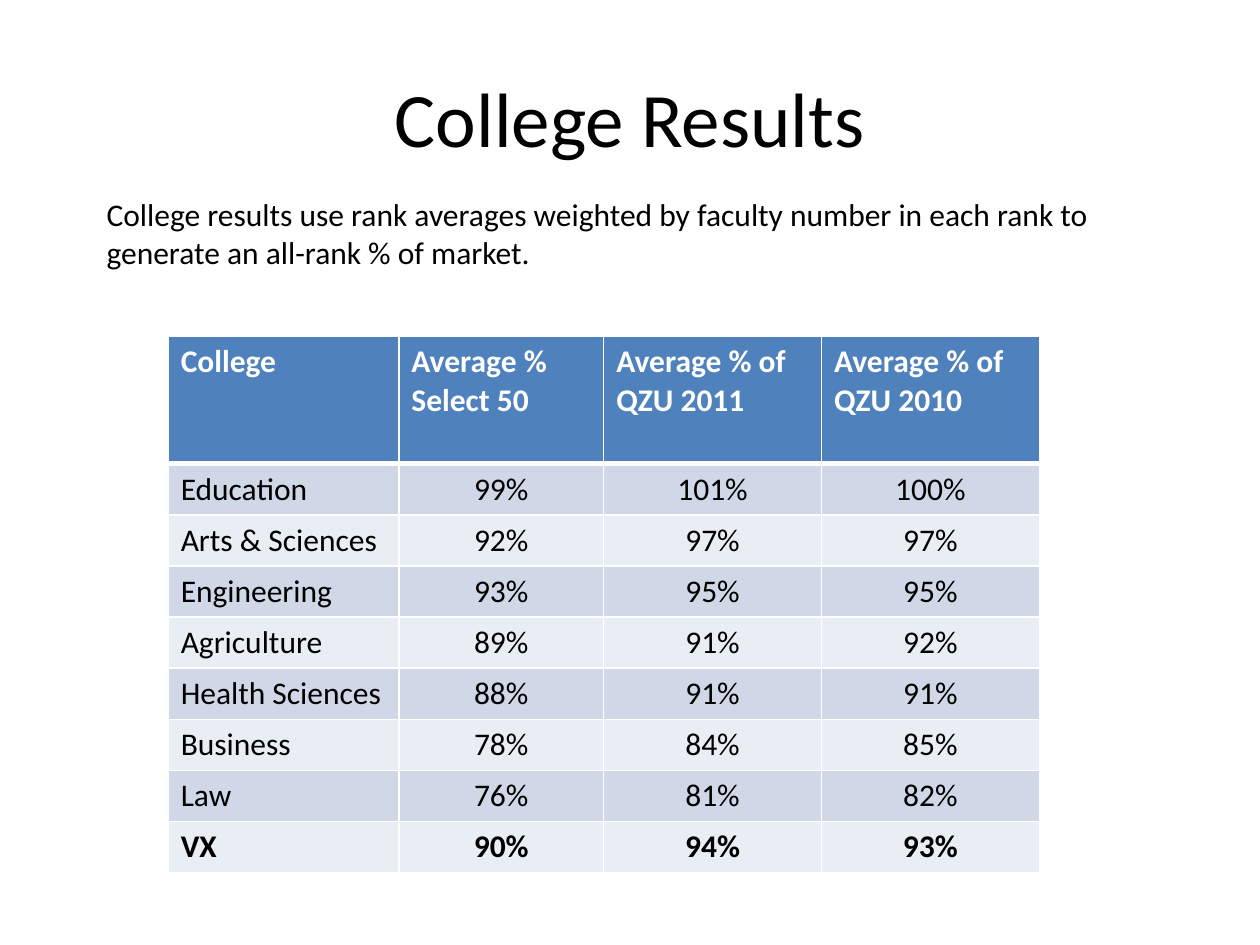
from dataclasses import dataclass

from lxml import etree
from pptx import Presentation
from pptx.dml.color import RGBColor
from pptx.enum.text import MSO_ANCHOR, PP_ALIGN
from pptx.oxml.ns import qn
from pptx.util import Cm, Pt

LEFT, CENTER = PP_ALIGN.LEFT, PP_ALIGN.CENTER
TOP, MIDDLE = MSO_ANCHOR.TOP, MSO_ANCHOR.MIDDLE

FONT = "Calibri"
BLACK, WHITE = "000000", "FFFFFF"
HEADER_FILL = "4F81BD"
BAND_FILLS = ("D0D8E8", "E9EDF4")

HEADERS = ("College", "Average % Select 50", "Average % of QZU 2011", "Average % of QZU 2010")
COLUMN_WIDTHS = (4.65, 4.13, 4.39, 4.39)
HEADER_HEIGHT, ROW_HEIGHT = 2.57, 1.03


@dataclass
class TextBlock:
    text: str
    left: float
    top: float
    width: float
    height: float
    size: int
    align: PP_ALIGN = LEFT
    anchor: MSO_ANCHOR = TOP


@dataclass
class CollegeResult:
    college: str
    select_50: int
    peer_2011: int
    peer_2010: int
    bold: bool = False

    def labels(self) -> list[str]:
        values = (self.select_50, self.peer_2011, self.peer_2010)
        return [self.college] + [f"{value}%" for value in values]


TEXT_BLOCKS = (
    TextBlock("College Results", 1.27, 0.76, 22.86, 3.18, 44, CENTER, MIDDLE),
    TextBlock(
        "College results use rank averages weighted by faculty number in each rank "
        "to generate an all-rank % of market.",
        1.9, 3.81, 21.39, 1.8, 18,
    ),
)

RESULTS = (
    CollegeResult("Education", 99, 101, 100),
    CollegeResult("Arts & Sciences", 92, 97, 97),
    CollegeResult("Engineering", 93, 95, 95),
    CollegeResult("Agriculture", 89, 91, 92),
    CollegeResult("Health Sciences", 88, 91, 91),
    CollegeResult("Business", 78, 84, 85),
    CollegeResult("Law", 76, 81, 82),
    CollegeResult("VX", 90, 94, 93, bold=True),
)


def color(hex_value: str) -> RGBColor:
    return RGBColor.from_string(hex_value)


def style_paragraph(paragraph, size: int, hex_value: str, align: PP_ALIGN, bold: bool = False) -> None:
    paragraph.alignment = align
    font = paragraph.font
    font.name, font.size, font.bold = FONT, Pt(size), bold
    font.color.rgb = color(hex_value)


def add_text_block(slide, block: TextBlock) -> None:
    box = slide.shapes.add_textbox(Cm(block.left), Cm(block.top), Cm(block.width), Cm(block.height))
    frame = box.text_frame
    frame.word_wrap = True
    frame.vertical_anchor = block.anchor
    frame.text = block.text
    style_paragraph(frame.paragraphs[0], block.size, BLACK, block.align)


def set_borders(cell, top: float, bottom: float) -> None:
    properties = cell._tc.get_or_add_tcPr()
    for side, width in (("L", 1), ("R", 1), ("T", top), ("B", bottom)):
        line = etree.SubElement(properties, qn(f"a:ln{side}"), w=str(Pt(width)))
        fill = etree.SubElement(line, qn("a:solidFill"))
        etree.SubElement(fill, qn("a:srgbClr"), val=WHITE)


def fill_row(table, row: int, labels, fill: str, text_color: str, bold: bool) -> None:
    for column, label in enumerate(labels):
        cell = table.cell(row, column)
        cell.text = label
        align = CENTER if row and column else LEFT
        style_paragraph(cell.text_frame.paragraphs[0], 18, text_color, align, bold)
        set_borders(cell, top=3 if row == 1 else 1, bottom=1 if row else 3)
        cell.fill.solid()
        cell.fill.fore_color.rgb = color(fill)


def add_results_table(slide) -> None:
    height = HEADER_HEIGHT + ROW_HEIGHT * len(RESULTS)
    table = slide.shapes.add_table(
        len(RESULTS) + 1, len(HEADERS), Cm(3.39), Cm(6.78), Cm(sum(COLUMN_WIDTHS)), Cm(height)
    ).table
    for column, width in zip(table.columns, COLUMN_WIDTHS):
        column.width = Cm(width)
    for index, row in enumerate(table.rows):
        row.height = Cm(ROW_HEIGHT if index else HEADER_HEIGHT)

    fill_row(table, 0, HEADERS, HEADER_FILL, WHITE, True)
    for index, result in enumerate(RESULTS):
        fill_row(table, index + 1, result.labels(), BAND_FILLS[index % 2], BLACK, result.bold)


def main() -> None:
    presentation = Presentation()
    presentation.slide_width, presentation.slide_height = Cm(25.4), Cm(19.05)
    slide = presentation.slides.add_slide(presentation.slide_layouts[6])

    # Title and explanation
    for block in TEXT_BLOCKS:
        add_text_block(slide, block)

    # Results by college
    add_results_table(slide)

    presentation.save("out.pptx")


if __name__ == "__main__":
    main()
